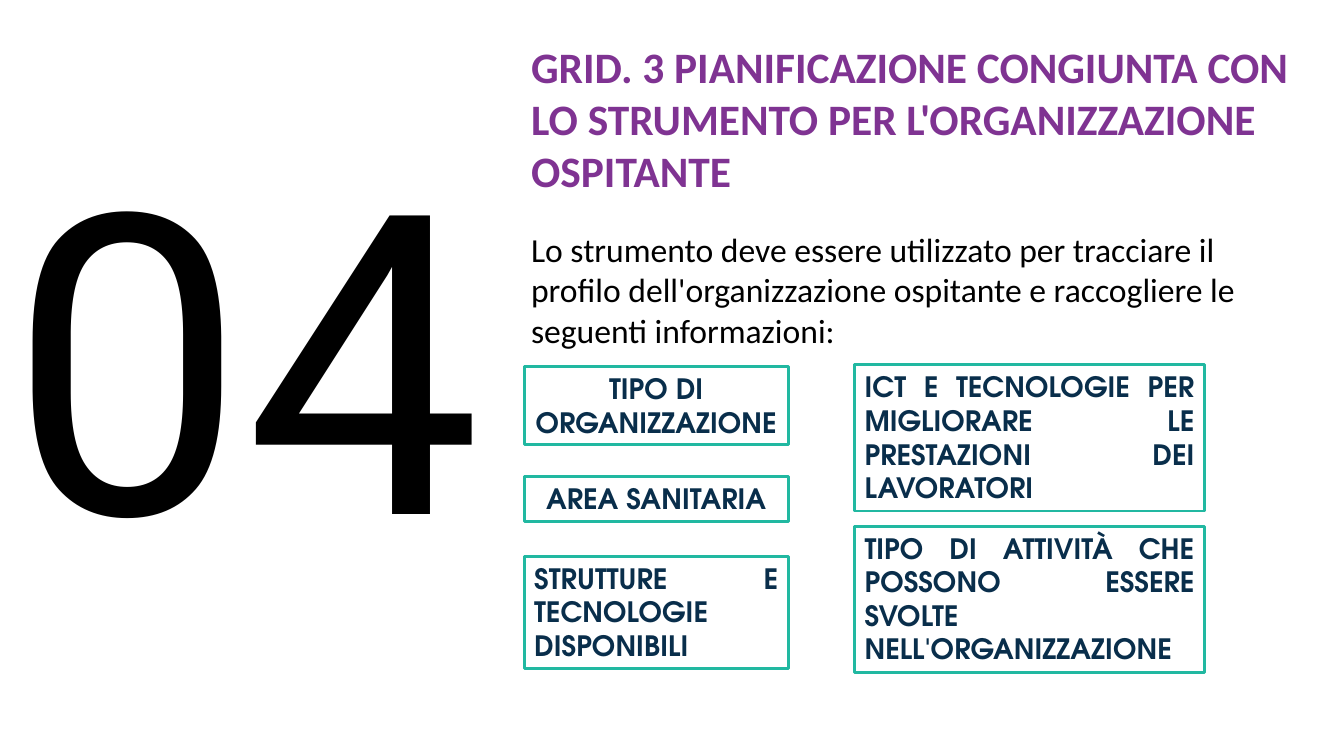
from pptx import Presentation
from pptx.dml.color import RGBColor
from pptx.enum.shapes import MSO_SHAPE
from pptx.enum.text import MSO_ANCHOR, PP_ALIGN
from pptx.util import Pt

BLACK = RGBColor(0x00, 0x00, 0x00)
PURPLE = RGBColor(0x7F, 0x33, 0x92)
TEAL = RGBColor(0x21, 0xB8, 0xA1)
NAVY = RGBColor(0x09, 0x2E, 0x4B)

NUMBER_FONT = {"name": "Roboto", "size": Pt(300), "bold": False}
HEADING_FONT = {"name": "Calibri", "size": Pt(31), "bold": True}
BODY_FONT = {"name": "Calibri", "size": Pt(24), "bold": False}
BOX_FONT = {"name": "TeX Gyre Adventor", "size": Pt(20), "bold": True}


def write(paragraph, text, font_format, color):
    run = paragraph.add_run()
    run.text = text
    for name, value in font_format.items():
        setattr(run.font, name, value)
    run.font.color.rgb = color


presentation = Presentation()
presentation.slide_width = Pt(960)
presentation.slide_height = Pt(540)
slide = presentation.slides.add_slide(presentation.slide_layouts[6])

# Section number
number_frame = slide.shapes.add_textbox(Pt(0), Pt(0), Pt(363), Pt(540)).text_frame
number_frame.word_wrap = True
number_frame.vertical_anchor = MSO_ANCHOR.MIDDLE
number_frame.paragraphs[0].line_spacing = 0.9
write(number_frame.paragraphs[0], "04", NUMBER_FONT, BLACK)

# Heading and introduction
intro_frame = slide.shapes.add_textbox(Pt(372.3), Pt(25.2), Pt(557.3), Pt(230.4)).text_frame
intro_frame.word_wrap = True
write(
    intro_frame.paragraphs[0],
    "GRID. 3 PIANIFICAZIONE CONGIUNTA CON LO STRUMENTO PER L'ORGANIZZAZIONE OSPITANTE",
    HEADING_FONT, PURPLE,
)
introduction = intro_frame.add_paragraph()
introduction.space_before = Pt(23.2)
write(
    introduction,
    "Lo strumento deve essere utilizzato per tracciare il profilo "
    "dell'organizzazione ospitante e raccogliere le seguenti informazioni:",
    BODY_FONT, BLACK,
)

# Information boxes: each column has a left edge, a width and its boxes
columns = [
    (374.5, 188.5, [
        (262.1, 55.4, PP_ALIGN.CENTER, "TIPO DI ORGANIZZAZIONE"),
        (340.6, 31.7, PP_ALIGN.CENTER, "AREA SANITARIA"),
        (397.4, 79.9, PP_ALIGN.JUSTIFY, "STRUTTURE E TECNOLOGIE DISPONIBILI"),
    ]),
    (610.5, 249.8, [
        (260.6, 104.4, PP_ALIGN.JUSTIFY,
         "ICT E TECNOLOGIE PER MIGLIORARE LE PRESTAZIONI DEI LAVORATORI"),
        (375.8, 104.4, PP_ALIGN.JUSTIFY,
         "TIPO DI ATTIVITÀ CHE POSSONO ESSERE SVOLTE NELL'ORGANIZZAZIONE"),
    ]),
]
for left, width, boxes in columns:
    for top, height, alignment, text in boxes:
        box = slide.shapes.add_shape(
            MSO_SHAPE.RECTANGLE, Pt(left), Pt(top), Pt(width), Pt(height))
        box.shadow.inherit = False
        box.fill.background()
        box.line.color.rgb = TEAL
        box.line.width = Pt(2)
        box.text_frame.word_wrap = True
        box.text_frame.vertical_anchor = MSO_ANCHOR.TOP
        paragraph = box.text_frame.paragraphs[0]
        paragraph.alignment = alignment
        write(paragraph, text, BOX_FONT, NAVY)

presentation.save("out.pptx")
